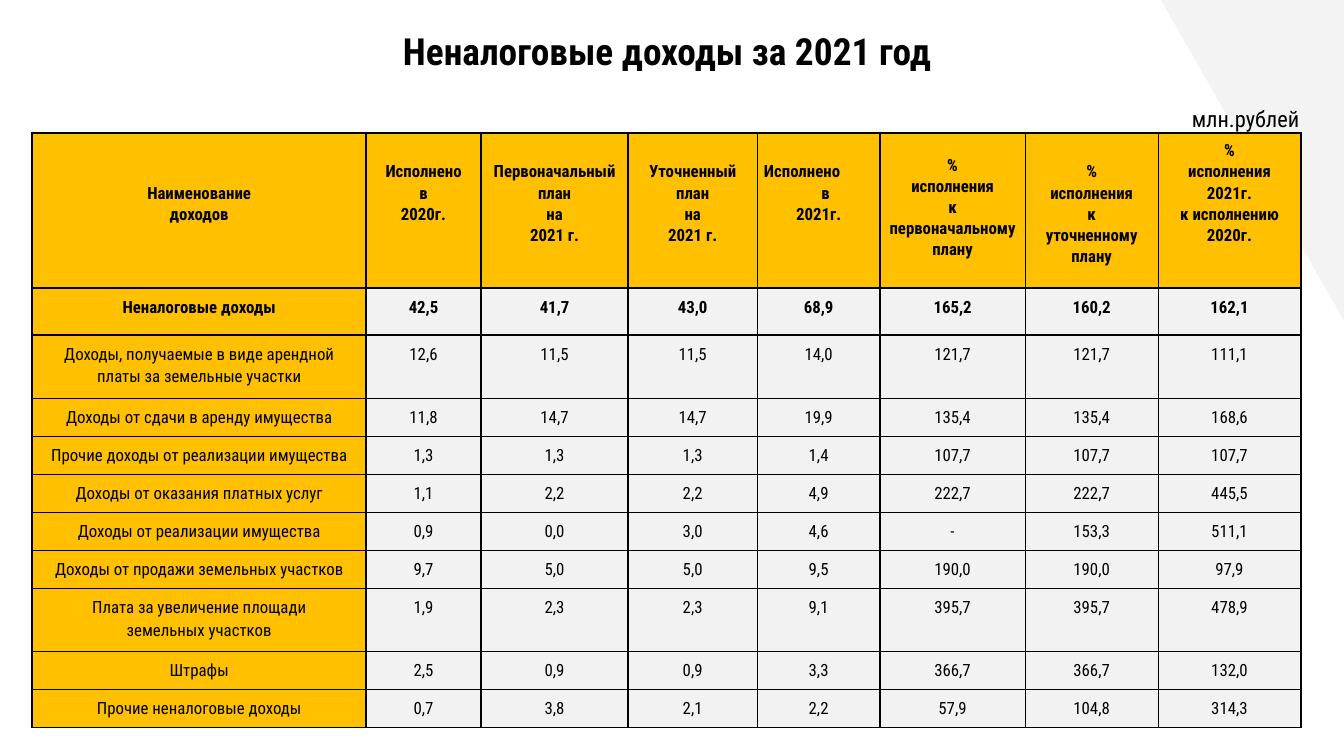
from dataclasses import dataclass

from lxml.etree import SubElement
from pptx import Presentation
from pptx.dml.color import RGBColor
from pptx.enum.shapes import MSO_SHAPE
from pptx.enum.text import PP_ALIGN
from pptx.oxml.ns import qn
from pptx.util import Pt

FONT = "Roboto Condensed"
BLACK = RGBColor(0x00, 0x00, 0x00)
AMBER = RGBColor(0xFF, 0xC0, 0x00)
LIGHT_GRAY = RGBColor(0xF2, 0xF2, 0xF2)
CORNER_GRAY = RGBColor(0xF3, 0xF3, 0xF3)

THICK, THIN = 1, 0.5
COLUMN_WIDTHS = (178.9, 61.6, 78.8, 69.2, 65.8, 77.7, 71.3, 76.4)
COLUMN_RULES = (THICK, THICK, THICK, THICK, THIN, THICK, THIN, THIN, THICK)
HEADER_LINE = 11.3
CELL_INSET = 3.6


@dataclass(frozen=True)
class Heading:
    lines: tuple[str, ...]
    lines_down: int = 1
    inset: float = CELL_INSET
    side_inset: float = CELL_INSET


@dataclass(frozen=True)
class Income:
    name: str
    values: str
    height: float = 20.35
    bold: bool = False
    rule_above: float = THIN


HEADINGS = (
    Heading(("Наименование", "доходов"), lines_down=2),
    Heading(("Исполнено", "в", "2020г.")),
    Heading(("Первоначальный", "план", "на", "2021 г.")),
    Heading(("Уточненный", "план", "на", "2021 г.")),
    Heading(("Исполнено", "в", "2021г.")),
    Heading(("%", "исполнения", "к", "первоначальному", "плану"),
            inset=0, side_inset=0),
    Heading(("%", "исполнения", "к", "уточненному", "плану")),
    Heading(("%", "исполнения 2021г.", "к исполнению 2020г."),
            lines_down=0, side_inset=4.5),
)
HEADER_HEIGHT = 83

INCOMES = (
    Income("Неналоговые доходы", "42,5 41,7 43,0 68,9 165,2 160,2 162,1",
           height=25.2, bold=True, rule_above=THICK),
    Income("Доходы, получаемые в виде арендной\nплаты за земельные участки",
           "12,6 11,5 11,5 14,0 121,7 121,7 111,1", height=34, rule_above=THICK),
    Income("Доходы от сдачи в аренду имущества",
           "11,8 14,7 14,7 19,9 135,4 135,4 168,6"),
    Income("Прочие доходы от реализации имущества",
           "1,3 1,3 1,3 1,4 107,7 107,7 107,7"),
    Income("Доходы от оказания платных услуг",
           "1,1 2,2 2,2 4,9 222,7 222,7 445,5"),
    Income("Доходы от реализации имущества",
           "0,9 0,0 3,0 4,6 - 153,3 511,1"),
    Income("Доходы от продажи земельных участков",
           "9,7 5,0 5,0 9,5 190,0 190,0 97,9"),
    Income("Плата за увеличение площади\nземельных участков",
           "1,9 2,3 2,3 9,1 395,7 395,7 478,9", height=34),
    Income("Штрафы", "2,5 0,9 0,9 3,3 366,7 366,7 132,0", rule_above=THICK),
    Income("Прочие неналоговые доходы",
           "0,7 3,8 2,1 2,2 57,9 104,8 314,3", rule_above=THICK),
)


def write_text(frame, text: str, *, size: float = 9, bold: bool = False,
               align: PP_ALIGN = PP_ALIGN.CENTER, spacing: float = 1.15) -> None:
    frame.word_wrap = True
    frame.text = text
    for paragraph in frame.paragraphs:
        paragraph.alignment = align
        paragraph.line_spacing = spacing
        for run in paragraph.runs:
            run.font.name = FONT
            run.font.size = Pt(size)
            run.font.bold = bold
            run.font.color.rgb = BLACK


def add_label(slide, left: float, top: float, width: float, height: float,
              text: str, **text_format) -> None:
    frame = slide.shapes.add_textbox(Pt(left), Pt(top), Pt(width), Pt(height)).text_frame
    frame.margin_left = frame.margin_right = Pt(7.2)
    frame.margin_top = frame.margin_bottom = Pt(7.2)
    write_text(frame, text, **text_format)


def draw_borders(cell, left: float, right: float, top: float, bottom: float) -> None:
    """Must run before the cell is filled: border elements precede the fill."""
    properties = cell._tc.get_or_add_tcPr()
    for side, width in zip("LRTB", (left, right, top, bottom)):
        line = SubElement(properties, qn(f"a:ln{side}"), w=str(Pt(width)))
        color = SubElement(SubElement(line, qn("a:solidFill")), qn("a:srgbClr"))
        color.set("val", str(BLACK))


def format_cell(cell, text: str, fill: RGBColor, *, inset: float = CELL_INSET,
                side_inset: float = CELL_INSET, lines_down: int = 0,
                **text_format) -> None:
    cell.fill.solid()
    cell.fill.fore_color.rgb = fill
    cell.margin_left = cell.margin_right = Pt(side_inset)
    cell.margin_top = Pt(inset + lines_down * HEADER_LINE)
    cell.margin_bottom = Pt(inset)
    write_text(cell.text_frame, text, **text_format)


def add_income_table(slide) -> None:
    heights = (HEADER_HEIGHT, *(income.height for income in INCOMES))
    row_rules = (THICK, *(income.rule_above for income in INCOMES), THICK)
    table = slide.shapes.add_table(
        len(heights), len(COLUMN_WIDTHS), Pt(17.2), Pt(71.3),
        Pt(sum(COLUMN_WIDTHS)), Pt(sum(heights))).table
    table.first_row = table.horz_banding = False
    for column, width in zip(table.columns, COLUMN_WIDTHS):
        column.width = Pt(width)
    for r, height in enumerate(heights):
        table.rows[r].height = Pt(height)
        for c in range(len(COLUMN_WIDTHS)):
            draw_borders(table.cell(r, c), *COLUMN_RULES[c:c + 2], *row_rules[r:r + 2])

    for c, heading in enumerate(HEADINGS):
        format_cell(table.cell(0, c), "\n".join(heading.lines), AMBER,
                    inset=heading.inset, side_inset=heading.side_inset,
                    lines_down=heading.lines_down, bold=True, spacing=1.07)
    executed, preposition, _ = table.cell(0, 4).text_frame.paragraphs
    executed.alignment = PP_ALIGN.LEFT
    preposition._p.get_or_add_pPr().set("marL", str(Pt(7.5)))

    for r, income in enumerate(INCOMES, start=1):
        for c, text in enumerate((income.name, *income.values.split())):
            format_cell(table.cell(r, c), text, LIGHT_GRAY if c else AMBER,
                        bold=income.bold)


def add_corner(slide) -> None:
    corner = slide.shapes.add_shape(
        MSO_SHAPE.RIGHT_TRIANGLE, Pt(584.6), Pt(36.7), Pt(172.8), Pt(98.6))
    corner.rotation = 270
    corner._element.spPr.find(qn("a:xfrm")).set("flipH", "1")
    corner.shadow.inherit = False
    corner.fill.solid()
    corner.fill.fore_color.rgb = CORNER_GRAY
    corner.line.fill.background()


def main() -> None:
    presentation = Presentation()
    presentation.slide_width, presentation.slide_height = Pt(720), Pt(405)
    slide = presentation.slides.add_slide(presentation.slide_layouts[6])
    add_corner(slide)
    add_label(slide, 86.4, 7.9, 542.2, 38.9, "Неналоговые доходы за 2021 год",
              size=20, bold=True, spacing=1.0)
    add_income_table(slide)
    add_label(slide, 631.4, 46.8, 88.6, 31, "млн.рублей",
              size=12, align=PP_ALIGN.LEFT)
    presentation.save("out.pptx")


if __name__ == "__main__":
    main()
